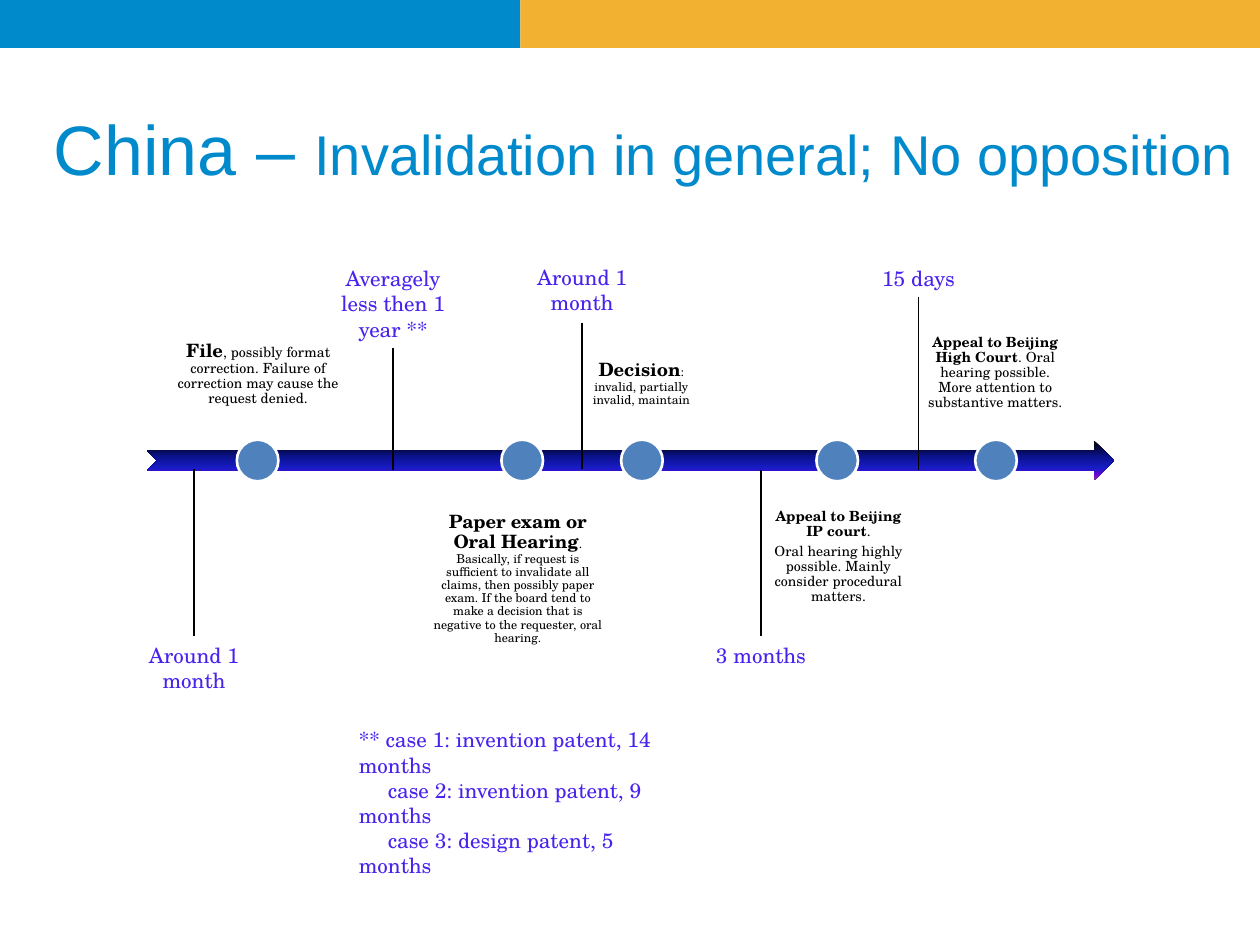
from lxml import etree
from pptx import Presentation
from pptx.dml.color import RGBColor
from pptx.enum.shapes import MSO_CONNECTOR, MSO_SHAPE
from pptx.enum.text import MSO_ANCHOR, PP_ALIGN
from pptx.oxml.ns import qn
from pptx.util import Inches, Pt

SERIF = "TeX Gyre Schola"
BLUE, VIOLET, BLACK = "008ACC", "4923ED", "000000"

deck = Presentation()
deck.slide_width, deck.slide_height = Inches(10), Inches(7.5)
slide = deck.slides.add_slide(deck.slide_layouts[6])
shapes = slide.shapes
rgb = RGBColor.from_string


def add_form(kind, x, y, w, h, color):
    form = shapes.add_shape(kind, Inches(x), Inches(y), Inches(w), Inches(h))
    form.shadow.inherit = False
    form.fill.solid()
    form.fill.fore_color.rgb = rgb(color)
    form.line.fill.background()
    return form


def add_text(x, y, w, h, paras, color=VIOLET, font=SERIF, align=PP_ALIGN.CENTER):
    """Each paragraph is a list of (text, size, bold) runs."""
    box = shapes.add_textbox(Inches(x), Inches(y), Inches(w), Inches(h))
    frame = box.text_frame
    frame.word_wrap = True
    for i, runs in enumerate(paras):
        para = frame.paragraphs[0] if i == 0 else frame.add_paragraph()
        para.alignment = align
        para.font.name = font
        para.font.color.rgb = rgb(color)
        for text, size, bold in runs:
            run = para.add_run()
            run.text = text
            run.font.size = Pt(size)
            run.font.bold = bold
    return frame


# Top band and title
add_form(MSO_SHAPE.RECTANGLE, 0, 0, 4.13, 0.38, BLUE)
add_form(MSO_SHAPE.RECTANGLE, 4.13, 0, 5.89, 0.38, "F2B131")
title = add_text(0.33, 0.67, 9.92, 1,
                 [[("China – ", 40, False),
                   ("Invalidation in general; No opposition", 32, False)]],
                 BLUE, "Arial", PP_ALIGN.LEFT)
title.vertical_anchor = MSO_ANCHOR.MIDDLE

# Time arrow
arrow = add_form(MSO_SHAPE.NOTCHED_RIGHT_ARROW, 1.17, 3.5, 7.67, 0.31, BLACK)
arrow.fill.gradient()
arrow.fill.gradient_angle = 270
stops = arrow.fill._fill._gradFill.find(qn("a:gsLst"))
for stop in list(stops):
    stops.remove(stop)
for place, color in [(0, "000000"), (40, "0A128C"), (70, "181CC7"),
                     (88, "7005D4"), (100, "8C3D91")]:
    stop = etree.SubElement(stops, qn("a:gs"), pos=str(place * 1000))
    etree.SubElement(stop, qn("a:srgbClr"), val=color)

# Steps: left, width, inset, above the arrow, dot left, paragraphs
steps = [
    (1.17, 1.76, 0.09, True, 1.88,
     [[("File", 10.5, True),
       (", possibly format correction. Failure of correction may cause "
        "the request denied.", 8, False)]]),
    (3.32, 1.58, 0.09, False, 3.98,
     [[("Paper exam or Oral Hearing", 10.5, True),
       (". Basically, if request is sufficient to invalidate all claims, "
        "then possibly paper exam. If the board tend to make a decision "
        "that is negative to the requester, oral hearing.", 7, False)]]),
    (4.59, 1, 0.09, True, 4.93,
     [[("Decision", 10.5, True),
       (": invalid, partially invalid, maintain", 7, False)]]),
    (6.06, 1.19, 0.06, False, 6.48,
     [[("Appeal to Beijing IP court", 8, True), (".", 8, False)],
      [("Oral hearing highly possible. Mainly consider procedural matters.",
        8, False)]]),
    (7.3, 1.2, 0.06, True, 7.74,
     [[("Appeal to Beijing High Court", 8, True),
       (". Oral hearing possible. More attention to substantive matters.",
        8, False)]]),
]
for x, w, inset, above, dot_x, paras in steps:
    frame = add_text(x, 2 if above else 3.98, w, 1.32, paras, BLACK)
    frame.vertical_anchor = MSO_ANCHOR.BOTTOM if above else MSO_ANCHOR.TOP
    frame.margin_left = frame.margin_right = Inches(inset)
    frame.margin_top = frame.margin_bottom = Inches(inset)
    for para in frame.paragraphs:
        para.line_spacing = 0.9
        para.space_after = Pt(3)
    dot = add_form(MSO_SHAPE.OVAL, dot_x, 3.49, 0.33, 0.33, "4F81BD")
    dot.line.color.rgb = rgb("FFFFFF")
    dot.line.width = Pt(1.5)

# Time spans: text, centre, top, width, height, line start, line end
spans = [
    ("Around 1 month", 1.54, 5.05, 0.92, 0.5, 3.72, 5.05),
    ("Around 1 month", 4.62, 2.05, 0.92, 0.5, 2.56, 3.72),
    ("Averagely less then 1 year **", 3.12, 2.06, 1.08, 0.71, 2.76, 3.73),
    ("3 months", 6.04, 5.05, 0.92, 0.3, 3.73, 5.05),
    ("15 days", 7.29, 2.06, 0.92, 0.3, 2.36, 3.73),
]
for text, mid, y, w, h, start, end in spans:
    add_text(mid - w / 2, y, w, h, [[(text, 12, False)]])
    line = shapes.add_connector(MSO_CONNECTOR.STRAIGHT, Inches(mid), Inches(start),
                                Inches(mid), Inches(end))
    line.line.color.rgb = rgb(BLACK)
    line.line.width = Pt(0.75)
    etree.SubElement(line._element.spPr, qn("a:effectLst"))

# Cases behind the average
cases = ["** case 1: invention patent, 14 months",
         "case 2: invention patent, 9 months",
         "case 3: design patent, 5 months"]
notes = add_text(2.75, 5.72, 2.8, 0.71, [[(case, 12, False)] for case in cases],
                 align=PP_ALIGN.LEFT)
for para in notes.paragraphs[1:]:
    para._p.get_or_add_pPr().set("indent", str(Inches(0.23)))

deck.save("out.pptx")
